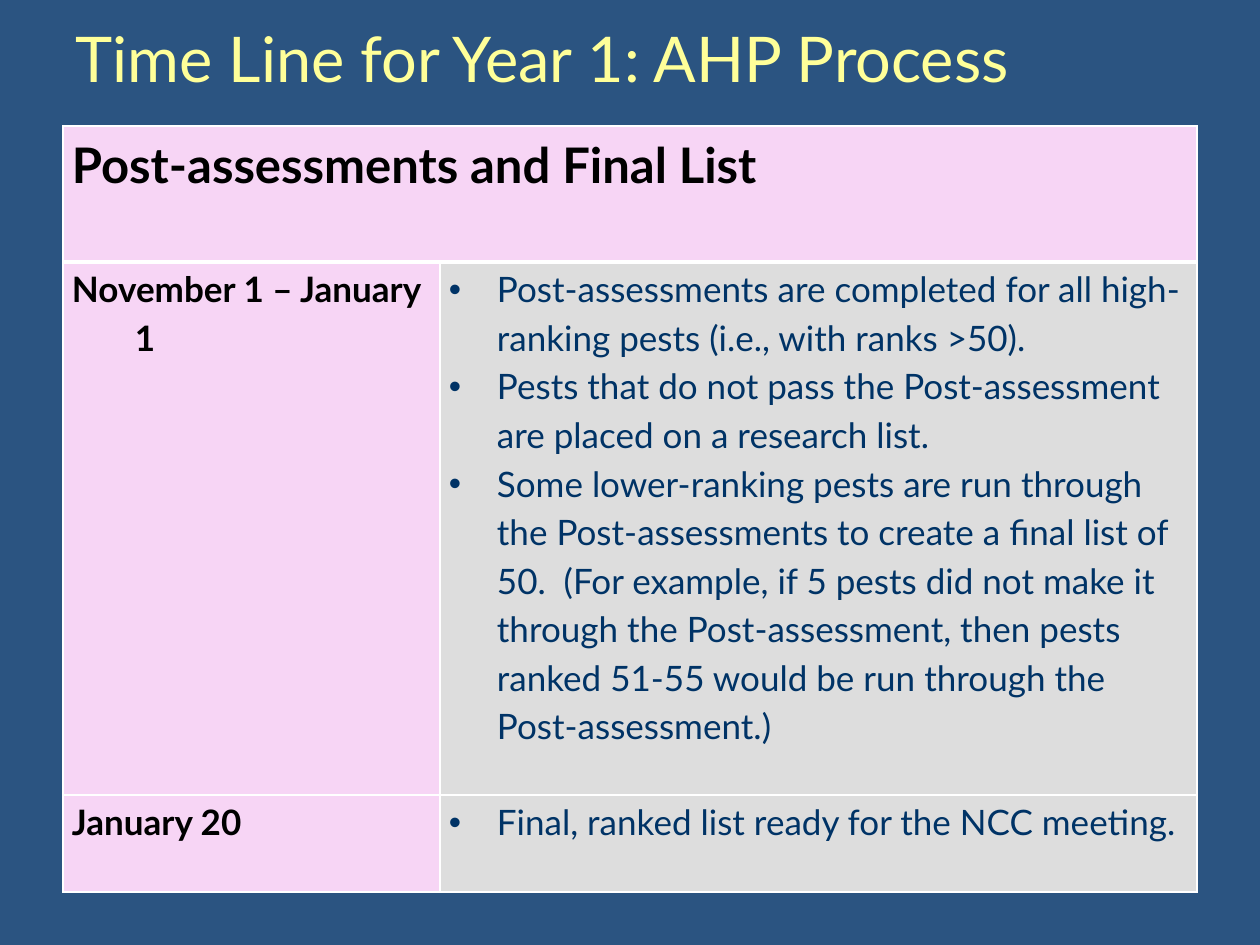
"""Build the Year 1 AHP time line slide with its schedule table."""
from lxml.etree import SubElement
from pptx import Presentation
from pptx.dml.color import RGBColor
from pptx.enum.text import MSO_ANCHOR, PP_ALIGN
from pptx.oxml import parse_xml
from pptx.oxml.ns import nsdecls, qn
from pptx.util import Emu, Pt

PX = 914400 // 126
COLORS = {
    "background": "2B5481",
    "title": "FFFF99",
    "label": "000000",
    "detail": "003366",
    "label_fill": "F7D5F5",
    "detail_fill": "DDDDDD",
    "border": "FFFFFF",
}
HEADING = "Post-assessments and Final List"
SCHEDULE = [
    ("November 1 – January 1", [
        "Post-assessments are completed for all high-ranking pests (i.e., with ranks >50).",
        "Pests that do not pass the Post-assessment are placed on a research list.",
        "Some lower-ranking pests are run through the Post-assessments to create a final "
        "list of 50.  (For example, if 5 pests did not make it through the Post-assessment, "
        "then pests ranked 51-55 would be run through the Post-assessment.)",
    ]),
    ("January 20", ["Final, ranked list ready for the NCC meeting."]),
]


def px(length):
    return Emu(length * PX)


def color(name):
    return RGBColor.from_string(COLORS[name])


class SlideBuilder:
    font = "Lato"

    def __init__(self, slide):
        self.slide = slide
        slide.background.fill.solid()
        slide.background.fill.fore_color.rgb = color("background")

    def format_runs(self, paragraph, size, color_name, bold=False):
        for run in paragraph.runs:
            run.font.name = self.font
            run.font.size = Pt(size)
            run.font.bold = bold
            run.font.color.rgb = color(color_name)

    def title(self, text, left, top, width, height):
        title = self.slide.shapes.title
        title.left, title.top, title.width, title.height = map(px, (left, top, width, height))
        frame = title.text_frame
        frame.text = text
        frame.vertical_anchor = MSO_ANCHOR.MIDDLE
        frame.paragraphs[0].alignment = PP_ALIGN.LEFT
        self.format_runs(frame.paragraphs[0], 36, "title")

    def table(self, left, top, columns, rows):
        frame = self.slide.shapes.add_table(
            len(rows), len(columns), px(left), px(top), px(sum(columns)), px(sum(rows)))
        table = frame.table
        table.first_row = table.horz_banding = False
        for column, width in zip(table.columns, columns):
            column.width = px(width)
        for row, height in zip(table.rows, rows):
            row.height = px(height)
        return table

    def cell(self, cell, lines, size, role, indent=0, bullet=False, bold=False):
        cell.margin_left = cell.margin_right = px(9)
        cell.margin_top = cell.margin_bottom = 0
        cell.fill.solid()
        cell.fill.fore_color.rgb = color(f"{role}_fill")
        frame = cell.text_frame
        frame.text = "\n".join(lines)
        for paragraph in frame.paragraphs:
            properties = paragraph._p.get_or_add_pPr()
            properties.set("marL", str(px(indent)))
            properties.set("indent", str(px(-indent)))
            if bullet:
                SubElement(properties, qn("a:buFont"), typeface="Arial")
                SubElement(properties, qn("a:buChar"), char="•")
            paragraph.line_spacing = 1.15
            self.format_runs(paragraph, size, role, bold)

    def borders(self, cell, **widths):
        properties = cell._tc.get_or_add_tcPr()
        for index, side in enumerate("LRTB"):
            width = Pt(widths.get(side, 1))
            properties.insert(index, parse_xml(
                f'<a:ln{side} {nsdecls("a")} w="{width}"><a:solidFill>'
                f'<a:srgbClr val="{COLORS["border"]}"/></a:solidFill></a:ln{side}>'))


def main():
    presentation = Presentation()
    presentation.slide_width, presentation.slide_height = px(1260), px(945)
    builder = SlideBuilder(presentation.slides.add_slide(presentation.slide_layouts[5]))
    builder.title("Time Line for Year 1: AHP Process", 63, 0, 1134, 114)

    table = builder.table(63, 126, [377, 757], [136, 533, 97])
    table.cell(0, 0).merge(table.cell(0, 1))
    builder.cell(table.cell(0, 0), [HEADING], 28, "label", bold=True)
    for row, (date, tasks) in enumerate(SCHEDULE, 1):
        builder.cell(table.cell(row, 0), [date], 20, "label", indent=63, bold=True)
        builder.cell(table.cell(row, 1), tasks, 20, "detail", indent=48, bullet=True)
    for column in range(2):
        builder.borders(table.cell(0, column), B=3)
        builder.borders(table.cell(1, column), T=3)
        builder.borders(table.cell(2, column))

    presentation.save("out.pptx")


if __name__ == "__main__":
    main()
